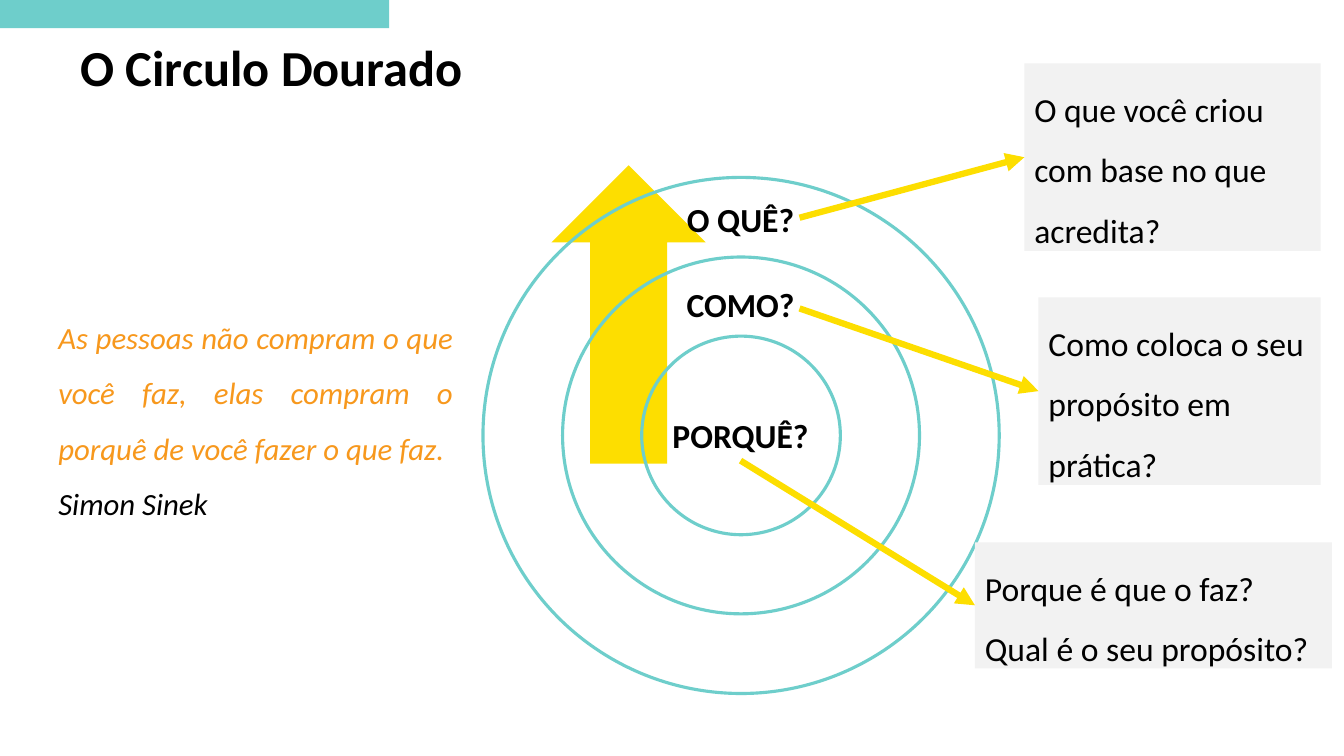
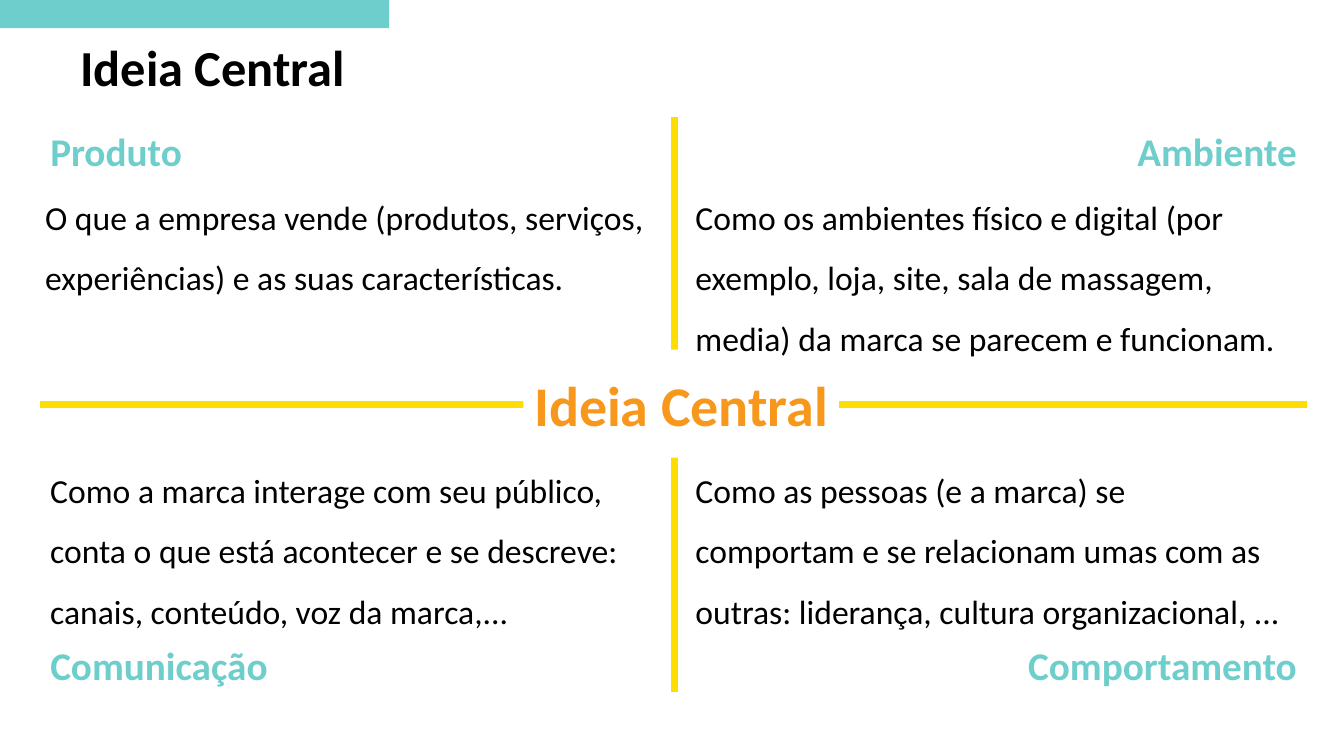
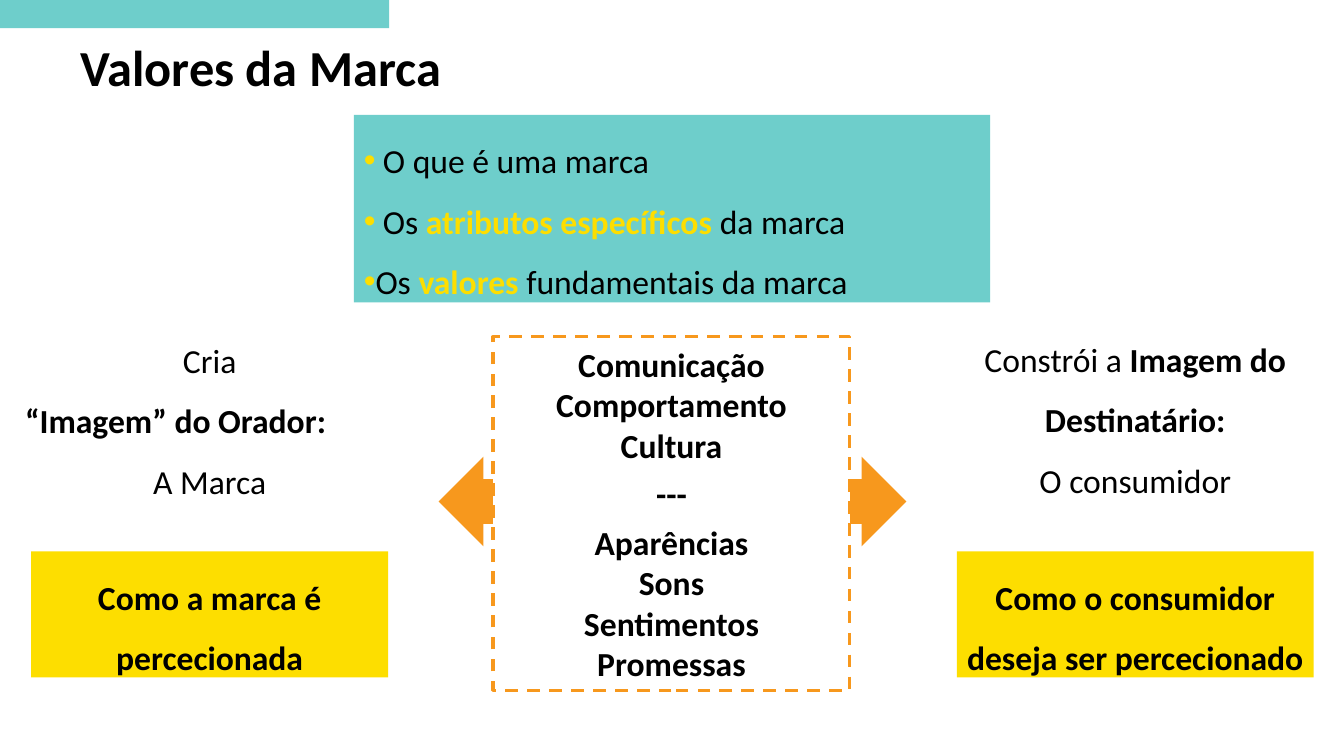
from lxml import etree
from pptx import Presentation
from pptx.dml.color import RGBColor
from pptx.enum.dml import MSO_LINE
from pptx.enum.shapes import MSO_CONNECTOR, MSO_SHAPE
from pptx.enum.text import MSO_ANCHOR, MSO_AUTO_SIZE, PP_ALIGN
from pptx.oxml.ns import qn
from pptx.util import Inches, Pt

TEAL = RGBColor(0x6E, 0xCE, 0xCB)
YELLOW = RGBColor(0xFD, 0xDE, 0x00)
ORANGE = RGBColor(0xF7, 0x98, 0x1D)
GREY = RGBColor(0xF2, 0xF2, 0xF2)
BLACK = RGBColor(0x00, 0x00, 0x00)
WHITE = RGBColor(0xFF, 0xFF, 0xFF)

RECT, OVAL = MSO_SHAPE.RECTANGLE, MSO_SHAPE.OVAL
UP, RIGHT_ARROW, LEFT_ARROW = MSO_SHAPE.UP_ARROW, MSO_SHAPE.RIGHT_ARROW, MSO_SHAPE.LEFT_ARROW
STRAIGHT, DASH = MSO_CONNECTOR.STRAIGHT, MSO_LINE.DASH
LEFT, CENTER, RIGHT, JUST = PP_ALIGN.LEFT, PP_ALIGN.CENTER, PP_ALIGN.RIGHT, PP_ALIGN.JUSTIFY
TOP, MIDDLE = MSO_ANCHOR.TOP, MSO_ANCHOR.MIDDLE
GROW, FIXED = MSO_AUTO_SIZE.SHAPE_TO_FIT_TEXT, MSO_AUTO_SIZE.NONE
FONT = "Calibri"
BOTTOM_SIDE, LEFT_SIDE = 2, 1


class Deck:
    def __init__(self):
        self.prs = Presentation()
        self.prs.slide_width, self.prs.slide_height = Inches(13.33), Inches(7.5)
        self.shapes = None

    def slide(self, title):
        """Start a slide with the top band and its title."""
        self.shapes = self.prs.slides.add_slide(self.prs.slide_layouts[6]).shapes
        self.shape(RECT, 0, 0, 3.86, 0.28, TEAL)
        self.text(0.7, 0.38, 8.8, 0.76, [title], size=36, bold=True, space=0.9, fit=FIXED)

    def shape(self, kind, x, y, w, h, fill=None, line=None):
        shape = self.shapes.add_shape(kind, Inches(x), Inches(y), Inches(w), Inches(h))
        shape.shadow.inherit = False
        if fill is None:
            shape.fill.background()
        else:
            shape.fill.solid()
            shape.fill.fore_color.rgb = fill
        if line is None:
            shape.line.fill.background()
        else:
            shape.line.color.rgb = line
            shape.line.width = Pt(2.25)
        return shape

    def text(self, x, y, w, h, lines, **style):
        box = self.shapes.add_textbox(Inches(x), Inches(y), Inches(w), Inches(h))
        self.put_text(box, lines, **style)
        return box

    def panel(self, x, y, w, h, fill, lines, line=None, **style):
        """A filled rectangle with text."""
        box = self.shape(RECT, x, y, w, h, fill, line)
        self.put_text(box, lines, **style)
        return box

    def put_text(self, box, lines, size=24, color=BLACK, bold=False, italic=False, align=LEFT,
                 space=1.5, anchor=TOP, fit=GROW, accent=None, hangs=()):
        """Fill a box; words between asterisks are bold, in the accent colour."""
        frame = box.text_frame
        frame.word_wrap = True
        frame.auto_size = fit
        frame.vertical_anchor = anchor
        for i, line in enumerate(lines):
            para = frame.add_paragraph() if i else frame.paragraphs[0]
            para.alignment = align
            para.line_spacing = space
            if hangs:
                self.bullet(para, hangs[i])
            font = para.font
            font.name, font.size, font.bold, font.italic = FONT, Pt(size), bold, italic
            font.color.rgb = color
            for j, part in enumerate(line.split("*")):
                if part:
                    run = para.add_run()
                    run.text = part
                    if j % 2:
                        run.font.bold = True
                        run.font.color.rgb = accent or color

    def bullet(self, para, hang):
        props = para._p.get_or_add_pPr()
        props.set("marL", str(Inches(hang)))
        props.set("indent", str(-Inches(hang)))
        tint = etree.SubElement(props, qn("a:buClr"))
        etree.SubElement(tint, qn("a:srgbClr"), val=str(YELLOW))
        etree.SubElement(props, qn("a:buFont"), typeface="Arial")
        etree.SubElement(props, qn("a:buChar"), char="•")

    def line(self, x1, y1, x2, y2, width, head=False):
        line = self.shapes.add_connector(STRAIGHT, Inches(x1), Inches(y1), Inches(x2), Inches(y2))
        line.line.color.rgb = YELLOW
        line.line.width = Pt(width)
        props = line._element.spPr
        if head:
            etree.SubElement(props.find(qn("a:ln")), qn("a:tailEnd"), type="triangle")
        etree.SubElement(props, qn("a:effectLst"))
        return line


def circle(deck):
    deck.slide("O Circulo Dourado")
    deck.shape(UP, 5.47, 1.64, 1.53, 2.96, YELLOW)
    for size in (5.12, 3.54, 1.97):
        deck.shape(OVAL, 7.35 - size / 2, 4.32 - size / 2, size, size, line=TEAL)
    rings = [
        deck.text(6.36, y, 1.97, 0.5, [word], bold=True, align=CENTER, space=1)
        for word, y in (("O QUÊ?", 1.92), ("COMO?", 2.77), ("PORQUÊ?", 4.07))]
    notes = [
        (10.16, 0.63, 2.94, 1.86, ["O que você criou com base no que acredita?"], 7.93, 2.16),
        (10.3, 2.95, 2.8, 1.86, ["Como coloca o seu propósito em prática?"], 7.93, 3.06),
        (9.67, 5.38, 3.54, 1.25, ["Porque é que o faz?", "Qual é o seu propósito?"], 7.34, 4.57),
    ]
    boxes = [deck.panel(x, y, w, h, GREY, lines) for x, y, w, h, lines, _, _ in notes]
    for box, (x, y, _, h, _, x1, y1) in zip(boxes, notes):
        arrow = deck.line(x1, y1, x, y + h / 2, 4.5, head=True)
        arrow.end_connect(box, LEFT_SIDE)
    arrow.begin_connect(rings[-1], BOTTOM_SIDE)
    quote = deck.text(0.48, 2.93, 4.11, 2.27, [
        "As pessoas não compram o que você faz, elas compram o porquê de você fazer o que faz.",
        "Simon Sinek"], size=22, color=ORANGE, italic=True, align=JUST)
    quote.text_frame.paragraphs[1].font.color.rgb = BLACK


def idea(deck):
    deck.slide("Ideia Central")
    deck.line(6.69, 1.16, 6.69, 6.87, 5)
    deck.line(0.4, 4.01, 12.96, 4.01, 5)
    deck.panel(5.19, 3.47, 3.13, 1.07, WHITE, ["Ideia Central"], size=40, color=ORANGE,
               bold=True, align=CENTER, space=1, anchor=MIDDLE, fit=FIXED)
    heads = [("Produto", 0.4, 1.21, LEFT), ("Ambiente", 6.75, 1.21, RIGHT),
             ("Comunicação", 0.4, 6.31, LEFT), ("Comportamento", 6.75, 6.31, RIGHT)]
    for word, x, y, align in heads:
        deck.text(x, y, 6.21, 0.57, [word], size=28, color=TEAL, bold=True, align=align, space=1)
    bodies = [
        (0.35, 1.7, 6.23, 1.25, "O que a empresa vende (produtos, serviços, experiências) "
         "e as suas características."),
        (6.8, 1.7, 6.16, 1.86, "Como os ambientes físico e digital (por exemplo, loja, site, "
         "sala de massagem, media) da marca se parecem e funcionam."),
        (6.8, 4.41, 6.07, 1.86, "Como as pessoas (e a marca) se comportam e se relacionam umas "
         "com as outras: liderança, cultura organizacional, ..."),
        (0.4, 4.41, 6.17, 1.86, "Como a marca interage com seu público, conta o que está "
         "acontecer e se descreve: canais, conteúdo, voz da marca,..."),
    ]
    for x, y, w, h, body in bodies:
        deck.text(x, y, w, h, [body])


def values(deck):
    deck.slide("Valores da Marca")
    for kind, x in ((LEFT_ARROW, 4.35), (RIGHT_ARROW, 7.45)):
        deck.shape(kind, x, 4.53, 1.54, 0.89, ORANGE)
    deck.text(9.33, 3.11, 3.86, 1.86, ["Constrói a *Imagem do Destinatário:*", "O consumidor"],
              align=CENTER)
    deck.panel(3.51, 1.14, 6.31, 1.86, TEAL, [
        "O que é uma marca",
        "Os *atributos específicos* da marca",
        "Os *valores* fundamentais da marca"], accent=YELLOW, hangs=(0.19, 0.19, 0.11))
    maker = deck.text(0.15, 3.12, 3.86, 1.86, ["Cria", "*“Imagem” do Orador:*", "A Marca"],
                      align=CENTER)
    maker.text_frame.paragraphs[1].alignment = LEFT
    core = deck.panel(4.89, 3.34, 3.54, 3.51, WHITE, [
        "Comunicação", "Comportamento", "Cultura", "---",
        "Aparências", "Sons", "Sentimentos", "Promessas"],
        line=ORANGE, bold=True, align=CENTER, space=1, anchor=MIDDLE, fit=FIXED)
    core.line.dash_style = DASH
    for para in core.text_frame.paragraphs[2:4]:
        para.space_after = Pt(6)
    for x, label in ((0.31, "Como a marca é percecionada"),
                     (9.49, "Como o consumidor deseja ser percecionado")):
        deck.panel(x, 5.47, 3.54, 1.25, YELLOW, [label], bold=True, align=CENTER)


def main():
    deck = Deck()
    for build in (circle, idea, values):
        build(deck)
    deck.prs.save("out.pptx")


if __name__ == "__main__":
    main()
